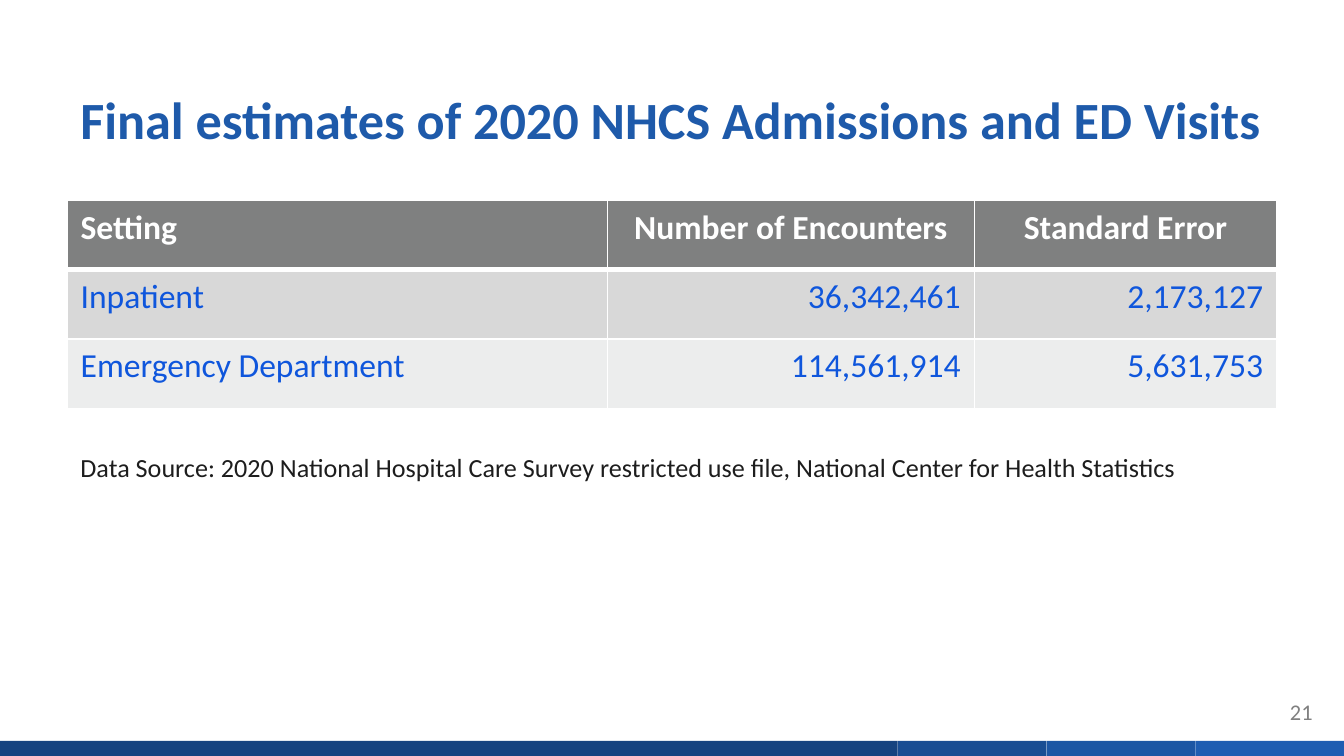
from collections import namedtuple

from lxml import etree
from pptx import Presentation
from pptx.dml.color import RGBColor
from pptx.enum.shapes import MSO_SHAPE
from pptx.enum.text import MSO_ANCHOR, PP_ALIGN
from pptx.oxml.ns import qn
from pptx.util import Inches, Pt

LEFT, CENTER, RIGHT = PP_ALIGN.LEFT, PP_ALIGN.CENTER, PP_ALIGN.RIGHT
TOP, BOTTOM = MSO_ANCHOR.TOP, MSO_ANCHOR.BOTTOM
RECTANGLE = MSO_SHAPE.RECTANGLE

WIDTH = 10
HEIGHT = WIDTH * 9 / 16
MARGIN = WIDTH * 0.05
CONTENT_WIDTH = WIDTH - 2 * MARGIN
FONT = "Calibri"

HEADER_FILL, ROW_FILLS = "7F8080", ("D8D8D8", "ECEDED")
WHITE, DATA_BLUE = "FFFFFF", "0F56DC"
LONG_BAND_COLOR = "164380"
SHORT_BAND_COLORS = ("194D93", "1C56A4", "1E5DB2")
COLUMN_WIDTHS = (4.02, 2.73, 2.25)
ESTIMATES = (
    ("Setting", "Number of Encounters", "Standard Error"),
    ("Inpatient", "36,342,461", "2,173,127"),
    ("Emergency Department", "114,561,914", "5,631,753"),
)

Box = namedtuple("Box", "left top width height")


def rgb(color):
    return RGBColor.from_string(color)


def inches(box):
    return [Inches(length) for length in box]


def write(paragraph, text, size, color, bold=False, align=LEFT):
    paragraph.text = text
    paragraph.alignment = align
    font = paragraph.font
    font.name, font.size, font.bold = FONT, Pt(size), bold
    font.color.rgb = rgb(color)


def add_line_of_text(slide, box, text, size, color, bold=False,
                     anchor=TOP, line_spacing=None):
    frame = slide.shapes.add_textbox(*inches(box)).text_frame
    frame.word_wrap = True
    frame.vertical_anchor = anchor
    paragraph = frame.paragraphs[0]
    write(paragraph, text, size, color, bold)
    if line_spacing:
        paragraph.line_spacing = Pt(line_spacing)


def add_segment(slide, box, color):
    segment = slide.shapes.add_shape(RECTANGLE, *inches(box))
    segment.shadow.inherit = False
    segment.fill.solid()
    segment.fill.fore_color.rgb = rgb(color)
    segment.line.fill.background()


def add_footer_band(slide, box):
    """Three equal segments at the right, then a long one at the left."""
    long_width = box.width * 0.668
    short_width = (box.width - long_width) / len(SHORT_BAND_COLORS)
    for index, color in enumerate(SHORT_BAND_COLORS):
        left = box.left + long_width + index * short_width
        add_segment(slide, Box(left, box.top, short_width, box.height), color)
    add_segment(slide, box._replace(width=long_width), LONG_BAND_COLOR)


def set_borders(cell, widths):
    """Draw white borders; widths maps a side (L, R, T, B) to points."""
    properties = cell._tc.get_or_add_tcPr()
    for position, (side, width) in enumerate(widths.items()):
        border = etree.Element(qn(f"a:ln{side}"), w=str(Pt(width)))
        fill = etree.SubElement(border, qn("a:solidFill"))
        etree.SubElement(fill, qn("a:srgbClr"), val=WHITE)
        properties.insert(position, border)


def add_estimates_table(slide, box):
    rows, columns = len(ESTIMATES), len(COLUMN_WIDTHS)
    table = slide.shapes.add_table(rows, columns, *inches(box)).table
    for column, width in zip(table.columns, COLUMN_WIDTHS):
        column.width = Inches(box.width * width / sum(COLUMN_WIDTHS))
    for r, values in enumerate(ESTIMATES):
        table.rows[r].height = Inches(box.height / rows)
        is_header = r == 0
        for c, value in enumerate(values):
            cell = table.cell(r, c)
            cell.fill.solid()
            cell.fill.fore_color.rgb = rgb(
                HEADER_FILL if is_header else ROW_FILLS[r - 1])
            set_borders(cell, {"L": 1, "R": 1, "T": 3 if r == 1 else 1,
                               "B": 3 if is_header else 1})
            number_align = CENTER if is_header else RIGHT
            write(cell.text_frame.paragraphs[0], value, 18,
                  WHITE if is_header else DATA_BLUE, is_header,
                  LEFT if c == 0 else number_align)


def build_slide(presentation):
    slide = presentation.slides.add_slide(presentation.slide_layouts[6])
    add_footer_band(slide, Box(0, HEIGHT * 0.98, WIDTH, HEIGHT * 0.02))
    add_line_of_text(slide, Box(WIDTH * 0.95, HEIGHT * 0.915, 0.44, 0.3),
                     "21", 12, "808080")
    add_line_of_text(
        slide, Box(MARGIN, HEIGHT * 0.04, CONTENT_WIDTH, 0.94),
        "Final estimates of 2020 NHCS Admissions and ED Visits",
        28, "1E5AAA", bold=True, anchor=BOTTOM, line_spacing=30)
    add_estimates_table(
        slide, Box(MARGIN, HEIGHT * 0.265, CONTENT_WIDTH, 1.55))
    add_line_of_text(
        slide, Box(MARGIN, HEIGHT * 0.575, CONTENT_WIDTH, 0.41),
        "Data Source: 2020 National Hospital Care Survey restricted use file, "
        "National Center for Health Statistics",
        14, "1D1D1D", line_spacing=22)


def main():
    presentation = Presentation()
    presentation.slide_width = Inches(WIDTH)
    presentation.slide_height = Inches(HEIGHT)
    build_slide(presentation)
    presentation.save("out.pptx")


if __name__ == "__main__":
    main()
